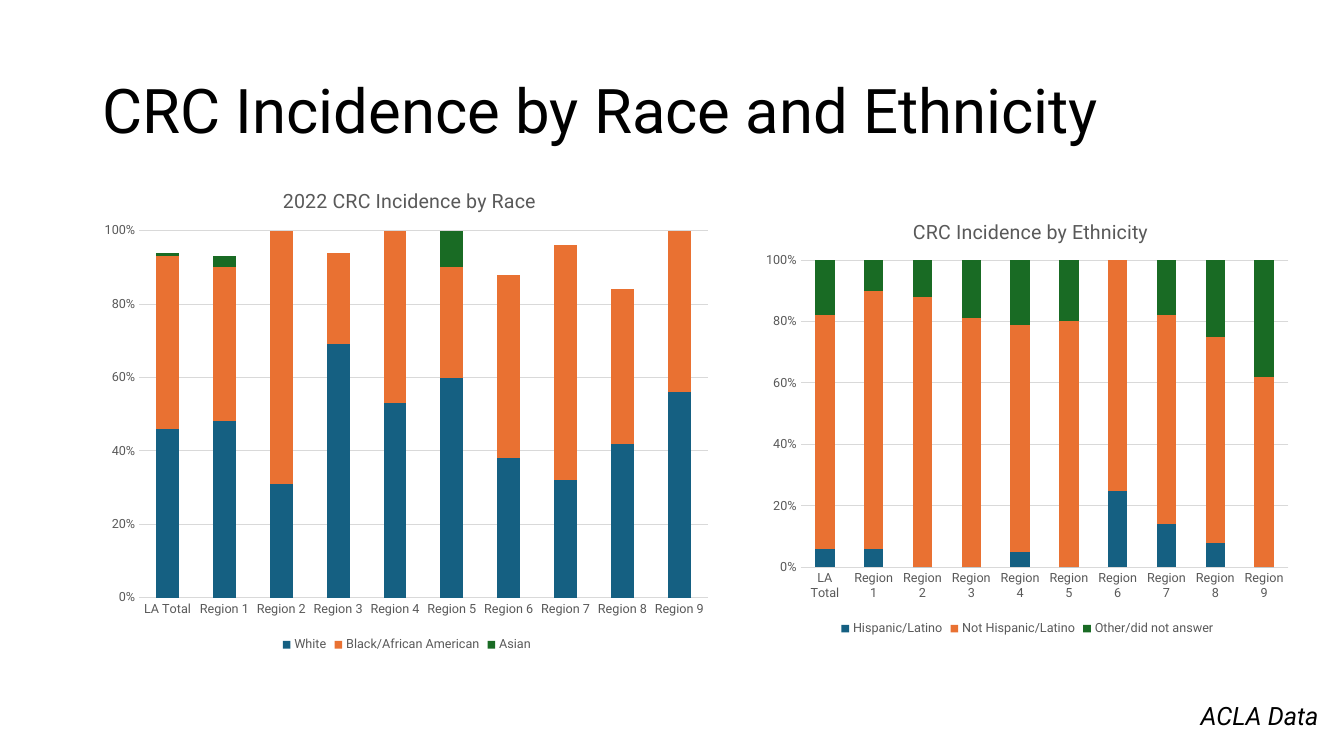
from lxml.etree import SubElement
from pptx import Presentation
from pptx.chart.data import CategoryChartData
from pptx.dml.color import RGBColor
from pptx.enum.chart import XL_CHART_TYPE, XL_LEGEND_POSITION, XL_TICK_MARK
from pptx.enum.text import MSO_ANCHOR
from pptx.oxml.ns import qn
from pptx.util import Inches, Pt

FONT = "Roboto"
BLACK = RGBColor(0x00, 0x00, 0x00)
GRAY = RGBColor(0x59, 0x59, 0x59)
GRID = RGBColor(0xD9, 0xD9, 0xD9)
SERIES_COLORS = [
    RGBColor(0x15, 0x60, 0x82),
    RGBColor(0xE9, 0x71, 0x32),
    RGBColor(0x19, 0x6B, 0x24),
]
AREAS = ["LA Total"] + [f"Region {number}" for number in range(1, 10)]
RACE = {
    "White": [0.46, 0.48, 0.31, 0.69, 0.53, 0.6, 0.38, 0.32, 0.42, 0.56],
    "Black/African American": [0.47, 0.42, 0.69, 0.25, 0.47, 0.3, 0.5, 0.64, 0.42, 0.44],
    "Asian": [0.01, 0.03, 0, 0, 0, 0.1, 0, 0, 0, 0],
}
ETHNICITY = {
    "Hispanic/Latino": [0.06, 0.06, 0, 0, 0.05, 0, 0.25, 0.14, 0.08, 0],
    "Not Hispanic/Latino": [0.76, 0.84, 0.88, 0.81, 0.74, 0.8, 0.75, 0.68, 0.67, 0.62],
    "Other/did not answer": [0.18, 0.1, 0.12, 0.19, 0.21, 0.2, 0, 0.18, 0.25, 0.38],
}


def style_font(font, size, color):
    """Apply the slide's typeface with a size and colour."""
    font.name = FONT
    font.size = Pt(size)
    font.bold = False
    font.color.rgb = color


def add_text(slide, box, text, size, italic=False, anchor=MSO_ANCHOR.TOP, spacing=1.0):
    """Place one line of text in the given box."""
    frame = slide.shapes.add_textbox(*map(Inches, box)).text_frame
    frame.word_wrap = True
    frame.vertical_anchor = anchor
    frame.text = text
    line = frame.paragraphs[0]
    line.line_spacing = spacing
    style_font(line.runs[0].font, size, BLACK)
    line.runs[0].font.italic = italic


def set_layout(parent, index, fractions, inner=False):
    """Fix a chart part at fractions of the chart's size."""
    for automatic in parent.findall(qn("c:layout")):
        parent.remove(automatic)
    layout = SubElement(parent, qn("c:layout"))
    parent.insert(index, layout)
    manual = SubElement(layout, qn("c:manualLayout"))
    if inner:
        SubElement(manual, qn("c:layoutTarget")).set("val", "inner")
    for mode in ("xMode", "yMode"):
        SubElement(manual, qn(f"c:{mode}")).set("val", "edge")
    for side, fraction in zip("xywh", fractions):
        SubElement(manual, qn(f"c:{side}")).set("val", f"{fraction:.4f}")


def style_axes(chart):
    """Format the area axis and the percentage axis."""
    areas, share = chart.category_axis, chart.value_axis
    for axis in (areas, share):
        axis.major_tick_mark = XL_TICK_MARK.NONE
        axis.minor_tick_mark = XL_TICK_MARK.NONE
        style_font(axis.tick_labels.font, 9, GRAY)
    share.minimum_scale, share.maximum_scale, share.major_unit = 0, 1, 0.2
    share.tick_labels.number_format = "0%"
    share.tick_labels.number_format_is_linked = False
    share.format.line.fill.background()
    for line in (areas.format.line, share.major_gridlines.format.line):
        line.color.rgb = GRID
        line.width = Pt(0.75)


def add_incidence_chart(slide, box, title, shares, title_at, plot_box):
    """Draw a stacked column chart with its title and plot placed inside the box."""
    data = CategoryChartData(number_format="0%")
    data.categories = AREAS
    for group, values in shares.items():
        data.add_series(group, values)
    chart = slide.shapes.add_chart(
        XL_CHART_TYPE.COLUMN_STACKED, *map(Inches, box), data
    ).chart
    style_font(chart.font, 10, BLACK)

    chart.has_title = True
    heading = chart.chart_title
    heading.text_frame.text = title
    style_font(heading.text_frame.paragraphs[0].runs[0].font, 14, GRAY)
    heading.include_in_layout = False
    size = box[2:] * 2
    set_layout(heading._element, 1, [part / whole for part, whole in zip(title_at, size)])
    plot_area = chart._chartSpace.chart.plotArea
    set_layout(plot_area, 0, [part / whole for part, whole in zip(plot_box, size)], inner=True)

    chart.has_legend = True
    chart.legend.position = XL_LEGEND_POSITION.BOTTOM
    chart.legend.include_in_layout = False
    style_font(chart.legend.font, 9, GRAY)

    columns = chart.plots[0]
    columns.gap_width, columns.overlap = 150, 100
    columns.vary_by_categories = False
    for series, color in zip(columns.series, SERIES_COLORS):
        series.format.fill.solid()
        series.format.fill.fore_color.rgb = color
        series.invert_if_negative = False
    style_axes(chart)


def build_incidence_slide(presentation):
    """Add the slide comparing incidence by race and by ethnicity."""
    slide = presentation.slides.add_slide(presentation.slide_layouts[6])
    add_text(slide, (0.92, 0.4, 11.5, 1.45), "CRC Incidence by Race and Ethnicity", 44,
             anchor=MSO_ANCHOR.MIDDLE, spacing=0.9)
    add_incidence_chart(slide, (7.49, 1.94, 5.4, 4.41), "CRC Incidence by Ethnicity",
                        ETHNICITY, (1.53, 0.19), (0.45, 0.64, 4.84, 3.05))
    add_text(slide, (11.81, 6.9, 1.63, 0.4), "ACLA Data", 18, italic=True)
    add_incidence_chart(slide, (0.92, 1.61, 6.23, 4.9), "2022 CRC Incidence by Race",
                        RACE, (1.85, 0.21), (0.46, 0.68, 5.64, 3.64))


def main():
    """Build and save the presentation."""
    presentation = Presentation()
    presentation.slide_width = Inches(13.33)
    presentation.slide_height = Inches(7.5)
    build_incidence_slide(presentation)
    presentation.save("out.pptx")


if __name__ == "__main__":
    main()
